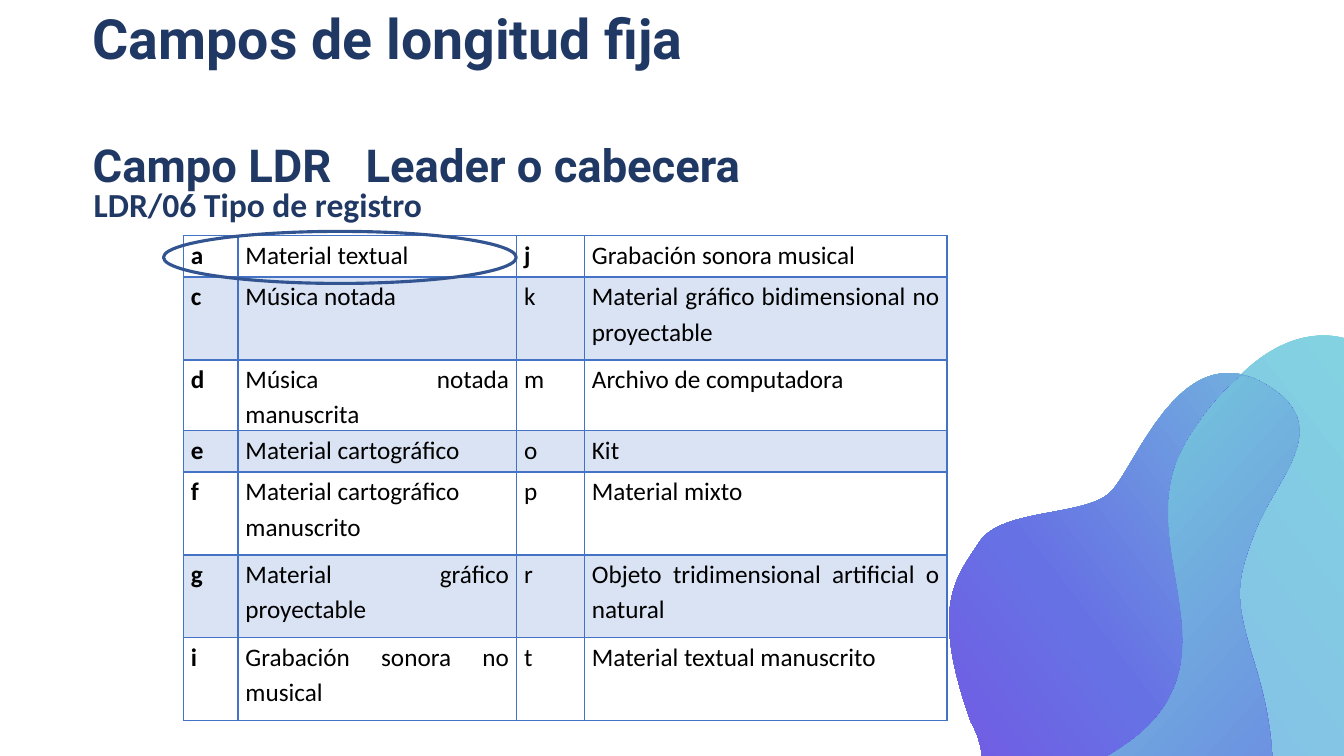
from copy import deepcopy
from dataclasses import dataclass
from math import cos, radians, sin

from lxml.etree import SubElement
from pptx import Presentation
from pptx.dml.color import RGBColor
from pptx.enum.shapes import MSO_SHAPE
from pptx.enum.text import MSO_ANCHOR, MSO_AUTO_SIZE, PP_ALIGN
from pptx.oxml import parse_xml
from pptx.oxml.ns import nsdecls, qn
from pptx.shapes.autoshape import Shape
from pptx.slide import Slide
from pptx.text.text import _Paragraph as Paragraph
from pptx.util import Pt

COLORS = {
    "navy": "203864", "black": "000000", "border": "4472C4", "band": "DAE3F3",
    "ring": "325491", "aqua": "80DEDE", "sky": "85C1E7", "lilac": "878CFF",
    "mint": "7CEFD8", "indigo": "6672E4", "violet": "882BE5",
}
BLOB_ROTATION = 52.2


@dataclass(frozen=True)
class Blob:
    """A closed outline of cubic curves, in points, with its gradient."""

    center: tuple[float, float]
    start: tuple[int, int]
    curves: list[tuple[int, int, int, int, int, int]]
    stops: list[tuple[float, str]]
    angle: int


@dataclass(frozen=True)
class RecordRow:
    """A table row with two codes and their record types."""

    left_code: str
    left_type: str
    right_code: str
    right_type: str
    height: float = 59.2


BLOBS = [
    Blob((860.4, 488.5), (766, 546), [
        (927, 484, 807, 390, 857, 307), (905, 224, 962, 234, 978, 251),
        (994, 268, 996, 282, 973, 313), (949, 341, 998, 394, 1031, 430),
        (1064, 467, 1077, 549, 997, 564), (917, 580, 921, 580, 882, 644),
        (843, 708, 797, 706, 797, 706), (797, 706, 719, 698, 709, 634),
        (699, 570, 766, 546, 766, 546),
    ], [(0, "aqua"), (0.54, "sky"), (1, "lilac")], 90),
    Blob((819, 489.2), (677, 644), [
        (677, 644, 704, 707, 822, 667), (940, 626, 907, 510, 894, 469),
        (882, 428, 881, 417, 897, 377), (913, 338, 956, 302, 899, 272),
        (840, 243, 810, 336, 792, 352), (774, 369, 715, 363, 699, 387),
        (684, 411, 662, 430, 693, 516), (693, 516, 718, 554, 681, 599),
        (681, 599, 662, 626, 677, 644),
    ], [(0, "mint"), (0.51, "indigo"), (1, "violet")], 90),
    Blob((844.6, 500.4), (822, 667), [
        (769, 685, 734, 682, 712, 673), (706, 665, 702, 655, 700, 643),
        (690, 579, 757, 556, 757, 556), (918, 493, 798, 399, 847, 316),
        (860, 294, 874, 278, 887, 268), (891, 269, 895, 270, 899, 272),
        (956, 302, 913, 338, 897, 377), (881, 417, 882, 428, 894, 469),
        (907, 510, 940, 626, 822, 667),
    ], [(0, "violet"), (0.19, "indigo"), (1, "mint")], 170),
]
COLUMN_WIDTHS = [39, 199, 48.5, 259]
RECORD_ROWS = [
    RecordRow("a", "Material textual", "j", "Grabación sonora musical", 29.5),
    RecordRow("c", "Música notada", "k", "Material gráfico bidimensional no proyectable"),
    RecordRow("d", "Música notada manuscrita", "m", "Archivo de computadora", 29.5),
    RecordRow("e", "Material cartográfico", "o", "Kit", 29.5),
    RecordRow("f", "Material cartográfico manuscrito", "p", "Material mixto"),
    RecordRow("g", "Material gráfico proyectable", "r", "Objeto tridimensional artificial o natural"),
    RecordRow("i", "Grabación sonora no musical", "t", "Material textual manuscrito"),
]


def color(name: str) -> RGBColor:
    """Look up a named colour."""
    return RGBColor.from_string(COLORS[name])


def format_para(para: Paragraph, font: str, size: float, ink: str, bold: bool,
                align: PP_ALIGN, spacing: float) -> None:
    """Format a paragraph and all its runs."""
    para.alignment, para.line_spacing = align, spacing
    for span in para.runs:
        span.font.name, span.font.size, span.font.bold = font, Pt(size), bold
        span.font.color.rgb = color(ink)


def add_title(page: Slide) -> None:
    """Fill the title placeholder with its two lines."""
    box = page.shapes.title
    box.left, box.top, box.width, box.height = Pt(66.2), Pt(36), Pt(826.5), Pt(114.5)
    frame = box.text_frame
    frame.text = "Campos de longitud fija\nCampo LDR\tLeader o cabecera"
    frame.word_wrap, frame.auto_size = True, MSO_AUTO_SIZE.NONE
    frame.vertical_anchor = MSO_ANCHOR.BOTTOM
    frame.margin_left = frame.margin_right = frame.margin_top = 0
    frame.margin_bottom = Pt(13.4)
    for para, size in zip(frame.paragraphs, (39.6, 32.4)):
        format_para(para, "Roboto", size, "navy", True, PP_ALIGN.LEFT, 1.0)
    heading, subheading = frame.paragraphs
    heading.space_after = Pt(48)
    subheading.space_before = Pt(0)
    subheading._p.get_or_add_pPr().append(parse_xml(
        f'<a:tabLst {nsdecls("a")}><a:tab pos="{Pt(195)}" algn="l"/></a:tabLst>'))


def turn_back(blob: Blob, x: float, y: float) -> tuple[int, int]:
    """Undo the rotation of a point about the centre of its blob."""
    angle = radians(-BLOB_ROTATION)
    dx, dy = x - blob.center[0], y - blob.center[1]
    return (Pt(blob.center[0] + dx * cos(angle) - dy * sin(angle)),
            Pt(blob.center[1] + dx * sin(angle) + dy * cos(angle)))


def bend_segments(shape: Shape) -> None:
    """Turn each three straight segments into one cubic curve."""
    segments = list(shape.element.iter(qn("a:lnTo")))
    for first, second, third in zip(segments[::3], segments[1::3], segments[2::3]):
        outline = first.getparent()
        curve = SubElement(outline, qn("a:cubicBezTo"))
        first.addprevious(curve)
        for segment in (first, second, third):
            curve.append(segment[0])
            outline.remove(segment)


def add_blob(page: Slide, blob: Blob) -> None:
    """Draw a rotated blob with a three-colour gradient."""
    builder = page.shapes.build_freeform(*turn_back(blob, *blob.start))
    builder.add_line_segments(
        [turn_back(blob, *curve[i:i + 2]) for curve in blob.curves for i in (0, 2, 4)])
    shape = builder.convert_to_shape()
    bend_segments(shape)
    outline = next(shape.element.iter(qn("a:path")))
    if outline.find(qn("a:close")) is None:
        SubElement(outline, qn("a:close"))
    shape.rotation = BLOB_ROTATION
    shape.shadow.inherit = False
    shape.line.fill.background()
    shape.fill.gradient()
    stop_list = shape.element.spPr.find(qn("a:gradFill")).find(qn("a:gsLst"))
    stop_list.append(deepcopy(stop_list[0]))
    for stop, (position, name) in zip(shape.fill.gradient_stops, blob.stops):
        stop.position, stop.color.rgb = position, color(name)
    shape.fill.gradient_angle = 360 - blob.angle


def add_record_table(page: Slide) -> None:
    """Draw the table of record types."""
    table = page.shapes.add_table(len(RECORD_ROWS), len(COLUMN_WIDTHS), Pt(131), Pt(168.5),
                                  Pt(sum(COLUMN_WIDTHS)), Pt(345)).table
    table.first_row = table.horz_banding = False
    for column, width in zip(table.columns, COLUMN_WIDTHS):
        column.width = Pt(width)
    for r, row in enumerate(RECORD_ROWS):
        table.rows[r].height = Pt(row.height)
        texts = (row.left_code, row.left_type, row.right_code, row.right_type)
        for c, text in enumerate(texts):
            cell = table.cell(r, c)
            cell.text_frame.text = text
            cell.margin_left = cell.margin_right = Pt(5.4)
            cell.margin_top = cell.margin_bottom = 0
            align = PP_ALIGN.LEFT if (row.left_code, c) == ("f", 1) else PP_ALIGN.JUSTIFY
            format_para(cell.text_frame.paragraphs[0], "Calibri", 18, "black",
                        c == 0 or text == "j", align, 1.15)
            for side in "LRTB":
                width = 2 if (r, side) in ((0, "B"), (1, "T")) else 1
                cell._tc.get_or_add_tcPr().append(parse_xml(
                    f'<a:ln{side} {nsdecls("a")} w="{Pt(width)}"><a:solidFill>'
                    f'<a:srgbClr val="{COLORS["border"]}"/></a:solidFill></a:ln{side}>'))
            if r % 2:
                cell.fill.solid()
                cell.fill.fore_color.rgb = color("band")
            else:
                cell.fill.background()


def add_caption(page: Slide) -> None:
    """Add the line that names the table."""
    frame = page.shapes.add_textbox(Pt(59.8), Pt(123.8), Pt(251.3), Pt(38.9)).text_frame
    frame.text = "LDR/06 Tipo de registro"
    frame.word_wrap, frame.auto_size = False, MSO_AUTO_SIZE.SHAPE_TO_FIT_TEXT
    format_para(frame.paragraphs[0], "Calibri", 24, "navy", True, PP_ALIGN.JUSTIFY, 1.15)


def add_ring(page: Slide) -> None:
    """Circle the first record type."""
    ring = page.shapes.add_shape(MSO_SHAPE.OVAL, Pt(116.8), Pt(165.3), Pt(252), Pt(37.2))
    ring.shadow.inherit = False
    ring.fill.background()
    ring.line.color.rgb, ring.line.width = color("ring"), Pt(2.25)


def main() -> None:
    """Build the slide and save it."""
    deck = Presentation()
    deck.slide_width, deck.slide_height = Pt(960), Pt(540)
    page = deck.slides.add_slide(deck.slide_layouts[5])
    add_title(page)
    for blob in BLOBS:
        add_blob(page, blob)
    add_record_table(page)
    add_caption(page)
    add_ring(page)
    deck.save("out.pptx")


if __name__ == "__main__":
    main()
